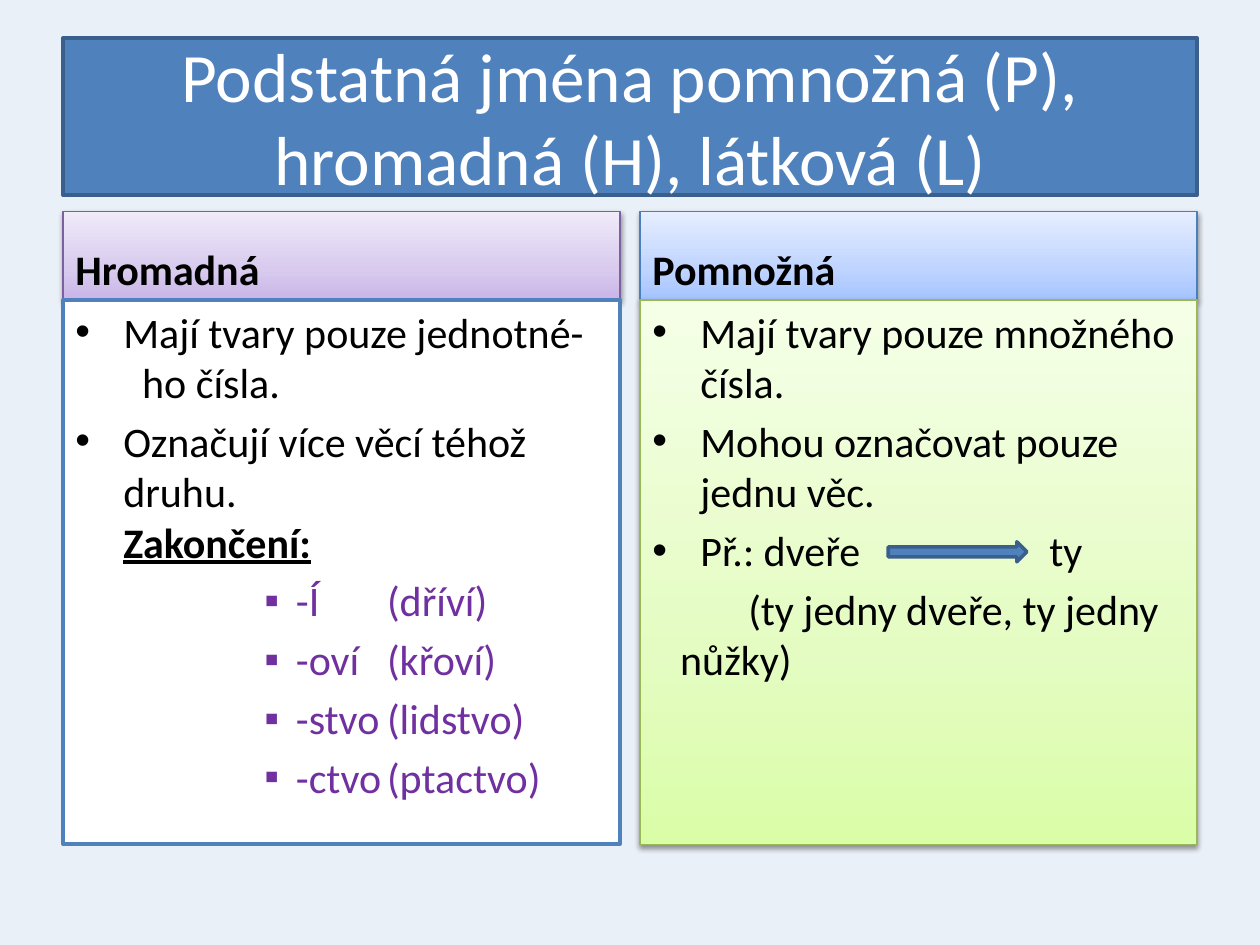
from copy import deepcopy

from lxml.etree import SubElement
from pptx import Presentation
from pptx.dml.color import RGBColor
from pptx.enum.shapes import MSO_SHAPE as Shape
from pptx.enum.text import MSO_ANCHOR as Anchor, MSO_AUTO_SIZE as AutoSize, PP_ALIGN as Align
from pptx.oxml.ns import qn
from pptx.util import Inches, Pt

BACKGROUND = RGBColor(0xEA, 0xF0, 0xF7)
BLUE = RGBColor(0x4F, 0x81, 0xBD)
DARK_BLUE = RGBColor(0x3A, 0x5F, 0x8C)
WHITE = RGBColor(0xFF, 0xFF, 0xFF)
BLACK = RGBColor(0, 0, 0)
VIOLET = RGBColor(0x70, 0x30, 0xA0)
PURPLE_LINE = RGBColor(0x7D, 0x60, 0xA0)
SKY_LINE = RGBColor(0x4B, 0x7E, 0xBC)
GREEN_LINE = RGBColor(0x98, 0xB9, 0x55)
PURPLES = [RGBColor(0xC9, 0xB5, 0xE8), RGBColor(0xD8, 0xCB, 0xEE), RGBColor(0xF0, 0xEA, 0xF9)]
SKIES = [RGBColor(0xA4, 0xC4, 0xFF), RGBColor(0xBF, 0xD4, 0xFF), RGBColor(0xE6, 0xEE, 0xFF)]
GREENS = [RGBColor(0xDA, 0xFD, 0xA7), RGBColor(0xE4, 0xFC, 0xC2), RGBColor(0xF5, 0xFF, 0xE7)]


def style_box(box, colors, line_color, line_width):
    """Three colours give a bottom-to-top gradient with a soft shadow; one gives a plain fill."""
    box.shadow.inherit = False
    box.line.color.rgb = line_color
    box.line.width = Pt(line_width)
    if len(colors) == 1:
        box.fill.solid()
        box.fill.fore_color.rgb = colors[0]
        return
    box.fill.gradient()
    box.fill.gradient_angle = 90
    stop_list = box._element.spPr.find(".//" + qn("a:gsLst"))
    stop_list.insert(1, deepcopy(stop_list[0]))
    for stop, position, color in zip(box.fill.gradient_stops, (0, 0.35, 1), colors):
        stop.position = position
        stop.color.rgb = color
    effects = box._element.spPr.find(qn("a:effectLst"))
    shadow = SubElement(effects, qn("a:outerShdw"), blurRad="40000", dist="20000",
                        dir="5400000", rotWithShape="0")
    shade = SubElement(shadow, qn("a:srgbClr"), val="000000")
    SubElement(shade, qn("a:alpha"), val="38000")


def add_paragraph(frame, text, left=0, first=0, bullet=None, tab=None, before=4.8, **font):
    """Write into the empty first paragraph, or into a new one; left and first are in inches."""
    paragraph = frame.paragraphs[0]
    if paragraph.runs:
        paragraph = frame.add_paragraph()
    paragraph.alignment = Align.LEFT
    paragraph.space_before = Pt(before)
    props = paragraph._p.get_or_add_pPr()
    props.set("marL", str(Inches(left)))
    props.set("indent", str(Inches(first)))
    if bullet:
        SubElement(props, qn("a:buFont"), typeface="Arial")
        SubElement(props, qn("a:buChar"), char=bullet)
    if tab:
        stops = SubElement(props, qn("a:tabLst"))
        SubElement(stops, qn("a:tab"), pos=str(Inches(tab)), algn="l")
    run = paragraph.add_run()
    run.text = text
    run.font.color.rgb = font.pop("color", BLACK)
    for name, value in {"name": "Calibri", "size": Pt(24), **font}.items():
        setattr(run.font, name, value)


prs = Presentation()
prs.slide_width, prs.slide_height = Inches(10), Inches(7.5)
slide = prs.slides.add_slide(prs.slide_layouts[5])
slide.background.fill.solid()
slide.background.fill.fore_color.rgb = BACKGROUND

title = slide.shapes.title
title.left, title.top, title.width, title.height = map(Inches, (0.5, 0.3, 9, 1.25))
style_box(title, [BLUE], DARK_BLUE, 2)
title.text_frame.text = "Podstatná jména pomnožná (P), hromadná (H), látková (L)"
title.text_frame.auto_size = AutoSize.NONE
title.text_frame.vertical_anchor = Anchor.MIDDLE
title_font = title.text_frame.paragraphs[0].runs[0].font
title_font.name, title_font.size = "Calibri", Pt(39.6)
title_font.color.rgb = WHITE

point = {"left": 0.38, "first": -0.38, "bullet": "•"}
ending = {"left": 1.75, "first": -0.25, "bullet": "▪", "tab": 2.64, "color": VIOLET}
collective_points = [
    ("Mají tvary pouze jednotné-", point),
    ("ho čísla.", {"left": 0.53, "before": 0}),
    ("Označují více věcí téhož druhu.", point),
    ("Zakončení:", {"left": 0.38, "before": 0, "bold": True, "underline": True}),
    ("-Í\t(dříví)", ending),
    ("-oví\t(křoví)", ending),
    ("-stvo\t(lidstvo)", ending),
    ("-ctvo\t(ptactvo)", ending),
]
plural_points = [
    ("Mají tvary pouze množného čísla.", point),
    ("Mohou označovat pouze jednu věc.", point),
    ("Př.: dveře\tty", {**point, "tab": 3.15}),
    ("(ty jedny dveře, ty jedny nůžky)", {"left": 0.22, "first": 0.54}),
]
columns = [
    (0.5, "Hromadná", (PURPLES, PURPLE_LINE, 0.75), collective_points, ([WHITE], BLUE, 2)),
    (5.08, "Pomnožná", (SKIES, SKY_LINE, 0.75), plural_points, (GREENS, GREEN_LINE, 0.75)),
]
for left, heading, heading_style, points, points_style in columns:
    parts = [
        (1.68, 0.7, Anchor.BOTTOM, heading_style, [(heading, {"bold": True})]),
        (2.38, 4.32, Anchor.TOP, points_style, points),
    ]
    for top, height, anchor, style, lines in parts:
        box = slide.shapes.add_shape(Shape.RECTANGLE, Inches(left), Inches(top),
                                     Inches(4.42), Inches(height))
        style_box(box, *style)
        box.text_frame.word_wrap = True
        box.text_frame.vertical_anchor = anchor
        for text, options in lines:
            add_paragraph(box.text_frame, text, **options)

arrow = slide.shapes.add_shape(Shape.RIGHT_ARROW, Inches(7.05), Inches(4.3),
                               Inches(1.1), Inches(0.16))
style_box(arrow, [BLUE], DARK_BLUE, 2)

prs.save("out.pptx")
